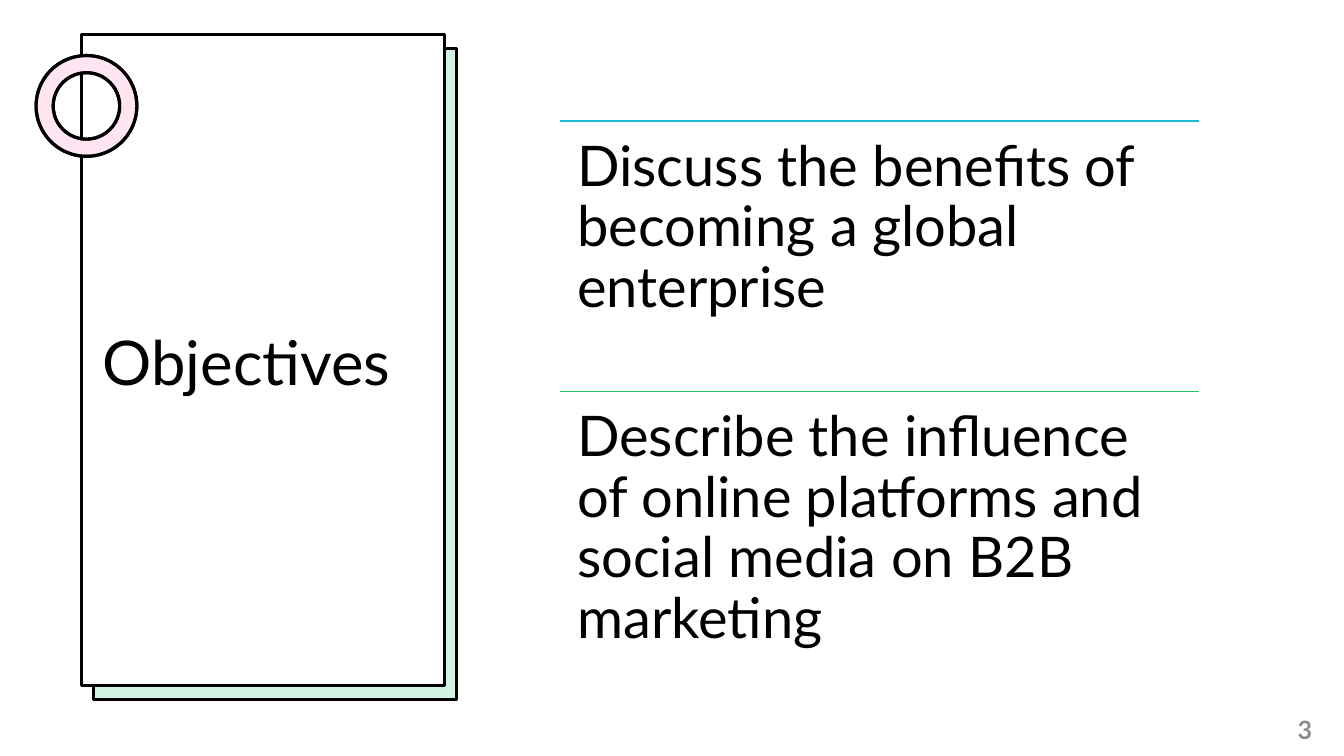
from dataclasses import dataclass

from pptx import Presentation
from pptx.dml.color import RGBColor
from pptx.enum.shapes import MSO_CONNECTOR, MSO_SHAPE
from pptx.enum.text import MSO_ANCHOR, PP_ALIGN
from pptx.oxml.ns import qn
from pptx.util import Cm, Pt
from lxml import etree

RECT = MSO_SHAPE.RECTANGLE
DONUT = MSO_SHAPE.DONUT
STRAIGHT = MSO_CONNECTOR.STRAIGHT
TOP = MSO_ANCHOR.TOP
MIDDLE = MSO_ANCHOR.MIDDLE
LEFT = PP_ALIGN.LEFT
RIGHT = PP_ALIGN.RIGHT


@dataclass(frozen=True)
class Theme:
    font: str = "Lato"
    black: str = "000000"
    white: str = "FFFFFF"
    green: str = "21C46B"
    pink: str = "FF80BD"
    blue: str = "1EB9D3"
    gray: str = "8C8C8C"
    title: int = 44
    body: int = 40
    number: int = 18
    edge: float = 2.25
    rule: float = 1


THEME = Theme()
GOALS = [
    ("Discuss the benefits of becoming a global enterprise", THEME.blue),
    ("Describe the influence of online platforms and social media "
     "on B2B marketing", THEME.green),
]


def rgb(code):
    return RGBColor.from_string(code)


def add_shape(slide, kind, area, fill, alpha=None):
    shape = slide.shapes.add_shape(kind, *map(Cm, area))
    shape.shadow.inherit = False
    shape.fill.solid()
    shape.fill.fore_color.rgb = rgb(fill)
    if alpha:
        color = shape._element.spPr.find(qn("a:solidFill")).find(qn("a:srgbClr"))
        etree.SubElement(color, qn("a:alpha"), val=str(alpha * 1000))
    shape.line.color.rgb = rgb(THEME.black)
    shape.line.width = Pt(THEME.edge)
    return shape


def add_tint(slide, kind, area, tint):
    return [add_shape(slide, kind, area, fill, alpha)
            for fill, alpha in ((THEME.white, None), (tint, 20))]


def add_text(slide, text, area, size, color=THEME.black, anchor=MIDDLE,
             align=LEFT, inset=(0.25, 0.13), space=1.0, bold=False):
    frame = slide.shapes.add_textbox(*map(Cm, area)).text_frame
    frame.word_wrap = True
    frame.vertical_anchor = anchor
    frame.margin_left = frame.margin_right = Cm(inset[0])
    frame.margin_top = frame.margin_bottom = Cm(inset[1])
    para = frame.paragraphs[0]
    para.alignment = align
    para.line_spacing = space
    run = para.add_run()
    run.text = text
    run.font.name = THEME.font
    run.font.size = Pt(size)
    run.font.bold = bold
    run.font.color.rgb = rgb(color)


def add_rule(slide, left, top, width, color):
    line = slide.shapes.add_connector(
        STRAIGHT, Cm(left), Cm(top), Cm(left + width), Cm(top))
    line.line.color.rgb = rgb(color)
    line.line.width = Pt(THEME.rule)
    etree.SubElement(line._element.spPr, qn("a:effectLst"))


def add_card(slide):
    add_tint(slide, RECT, (2.36, 1.22, 9.14, 16.41), THEME.green)
    add_shape(slide, RECT, (2.06, 0.86, 9.14, 16.41), THEME.white)
    for ring in add_tint(slide, DONUT, (0.91, 1.4, 2.54, 2.54), THEME.pink):
        ring.adjustments[0] = 0.17
    add_text(slide, "Objectives", (2.34, 3.33, 8.64, 11.76), THEME.title,
             space=0.9)


def add_goals(slide, left=14.12, top=3.05, width=16.1, height=6.81):
    for row, (text, color) in enumerate(GOALS):
        y = top + row * height
        add_rule(slide, left, y, width, color)
        add_text(slide, text, (left, y, width, height), THEME.body,
                 anchor=TOP, inset=(0.43, 0.43), space=0.9)


def main():
    deck = Presentation()
    deck.slide_width, deck.slide_height = Cm(33.87), Cm(19.05)
    slide = deck.slides.add_slide(deck.slide_layouts[6])
    add_card(slide)
    add_goals(slide)
    add_text(slide, "3", (25.7, 17.86, 7.62, 1.02), THEME.number, THEME.gray,
             align=RIGHT, bold=True)
    deck.save("out.pptx")


if __name__ == "__main__":
    main()
